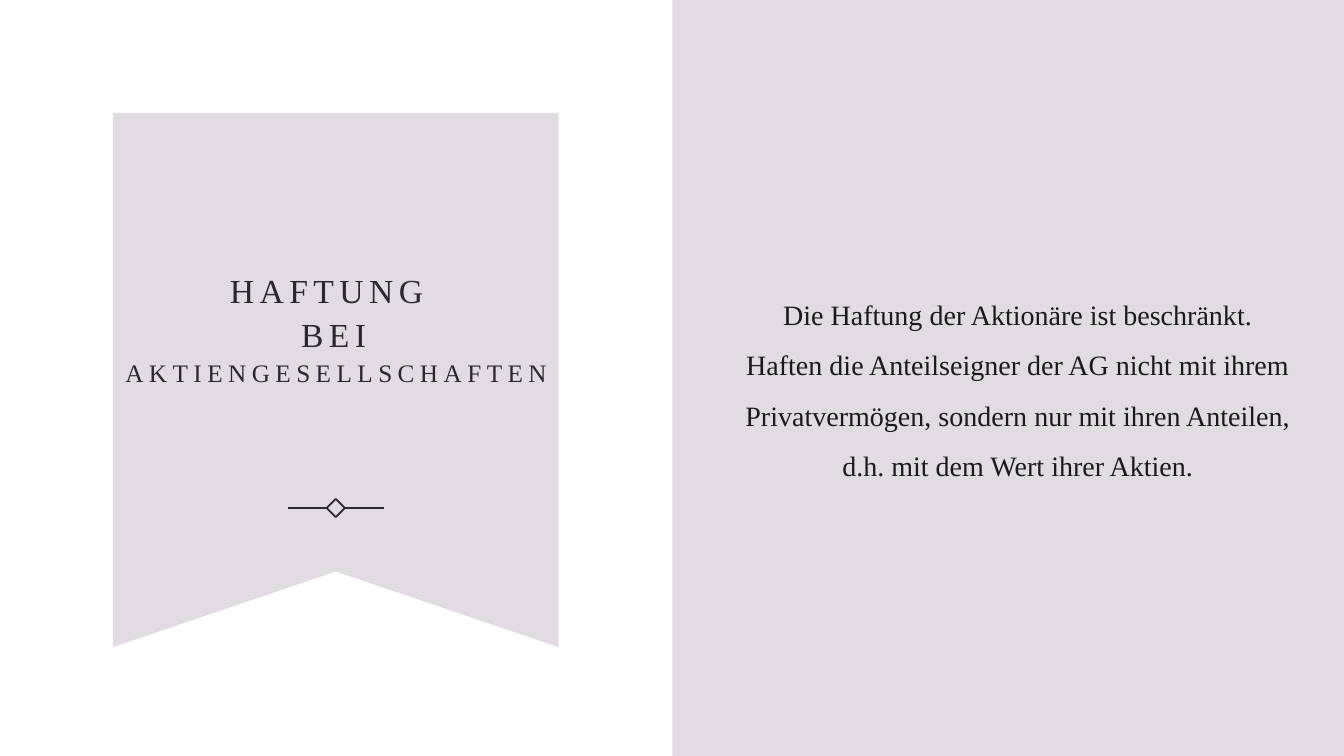
from pptx import Presentation
from pptx.dml.color import RGBColor
from pptx.enum.shapes import MSO_CONNECTOR, MSO_SHAPE
from pptx.enum.text import MSO_ANCHOR, MSO_AUTO_SIZE, PP_ALIGN
from pptx.oxml.ns import qn
from pptx.util import Inches, Pt
from lxml.etree import SubElement

COLORS = {"panel": "E0DCE1", "ornament": "2C2830", "body": "1A1A1A"}
FONT = "Times New Roman"
BANNER_LEFT, BANNER_TOP, BANNER_RIGHT = 1.12, 1.12, 5.54
BANNER_CENTER, BANNER_NOTCH, BANNER_BOTTOM = 3.33, 5.67, 6.42
ORNAMENT_Y, DIAMOND_SIZE = 5.04, 0.18


def color(key):
    return RGBColor.from_string(COLORS[key])


def place(shape, left, top, width, height):
    bounds = {"left": left, "top": top, "width": width, "height": height}
    for name, value in bounds.items():
        setattr(shape, name, Inches(value))


def fill_panel(shape):
    shape.shadow.inherit = False
    shape.fill.solid()
    shape.fill.fore_color.rgb = color("panel")
    shape.line.fill.background()


def style_ornament(line):
    line.color.rgb = color("ornament")
    line.width = Pt(1.25)


def add_side_panel(slide):
    panel = slide.shapes.add_shape(
        MSO_SHAPE.RECTANGLE, Inches(6.67), 0, Inches(6.67), Inches(7.5))
    fill_panel(panel)


def add_banner(slide):
    outline = slide.shapes.build_freeform(
        Inches(BANNER_LEFT), Inches(BANNER_TOP))
    corners = [(BANNER_RIGHT, BANNER_TOP), (BANNER_RIGHT, BANNER_BOTTOM),
               (BANNER_CENTER, BANNER_NOTCH), (BANNER_LEFT, BANNER_BOTTOM)]
    outline.add_line_segments([(Inches(x), Inches(y)) for x, y in corners])
    fill_panel(outline.convert_to_shape())


def add_ornament(slide):
    half = DIAMOND_SIZE / 2
    diamond = slide.shapes.add_shape(
        MSO_SHAPE.DIAMOND, Inches(BANNER_CENTER - half),
        Inches(ORNAMENT_Y - half), Inches(DIAMOND_SIZE), Inches(DIAMOND_SIZE))
    diamond.shadow.inherit = False
    diamond.fill.background()
    style_ornament(diamond.line)
    for start, end in ((2.86, 3.24), (3.42, 3.81)):
        stroke = slide.shapes.add_connector(
            MSO_CONNECTOR.STRAIGHT, Inches(start), Inches(ORNAMENT_Y),
            Inches(end), Inches(ORNAMENT_Y))
        style_ornament(stroke.line)
        SubElement(stroke._element.spPr, qn("a:effectLst"))


def prepare_text(shape, line_spacing):
    frame = shape.text_frame
    frame_format = {"word_wrap": True, "auto_size": MSO_AUTO_SIZE.NONE,
                    "vertical_anchor": MSO_ANCHOR.MIDDLE}
    for name, value in frame_format.items():
        setattr(frame, name, value)
    paragraph = frame.paragraphs[0]
    paragraph_format = {"alignment": PP_ALIGN.CENTER,
                        "line_spacing": line_spacing,
                        "space_before": Pt(0)}
    for name, value in paragraph_format.items():
        setattr(paragraph, name, value)
    return paragraph


def add_words(paragraph, words, size, color_key, tracking=0):
    run = paragraph.add_run()
    run.text = words
    font_format = {"name": FONT, "size": Pt(size), "bold": False}
    for name, value in font_format.items():
        setattr(run.font, name, value)
    run.font.color.rgb = color(color_key)
    if tracking:
        run.font._element.set("spc", str(round(tracking * 100)))


def fill_title(slide):
    title = slide.shapes.title
    place(title, 0.79, 2.41, 5.09, 1.66)
    heading = prepare_text(title, 1.1)
    add_words(heading, "HAFTUNG ", 24, "ornament", 3.9)
    heading.add_line_break()
    add_words(heading, "BEI ", 24, "ornament", 3.9)
    add_words(heading, "AKTIENGESELLSCHAFTEN", 18, "ornament", 3.9)


def add_liability_text(slide):
    statement = slide.shapes.add_textbox(0, 0, 0, 0)
    place(statement, 7.28, 0.92, 5.63, 5.73)
    paragraph = prepare_text(statement, 1.5)
    add_words(paragraph,
              "Die Haftung der Aktionäre ist beschränkt. Haften die "
              "Anteilseigner der AG nicht mit ihrem Privatvermögen, sondern "
              "nur mit ihren Anteilen, d.h. mit dem Wert ihrer Aktien.",
              20, "body")


def main():
    presentation = Presentation()
    presentation.slide_width = Inches(13.33)
    presentation.slide_height = Inches(7.5)
    slide = presentation.slides.add_slide(presentation.slide_layouts[5])
    add_side_panel(slide)
    add_banner(slide)
    add_ornament(slide)
    fill_title(slide)
    add_liability_text(slide)
    slide.shapes._spTree.append(slide.shapes.title._element)
    presentation.save("out.pptx")


if __name__ == "__main__":
    main()
